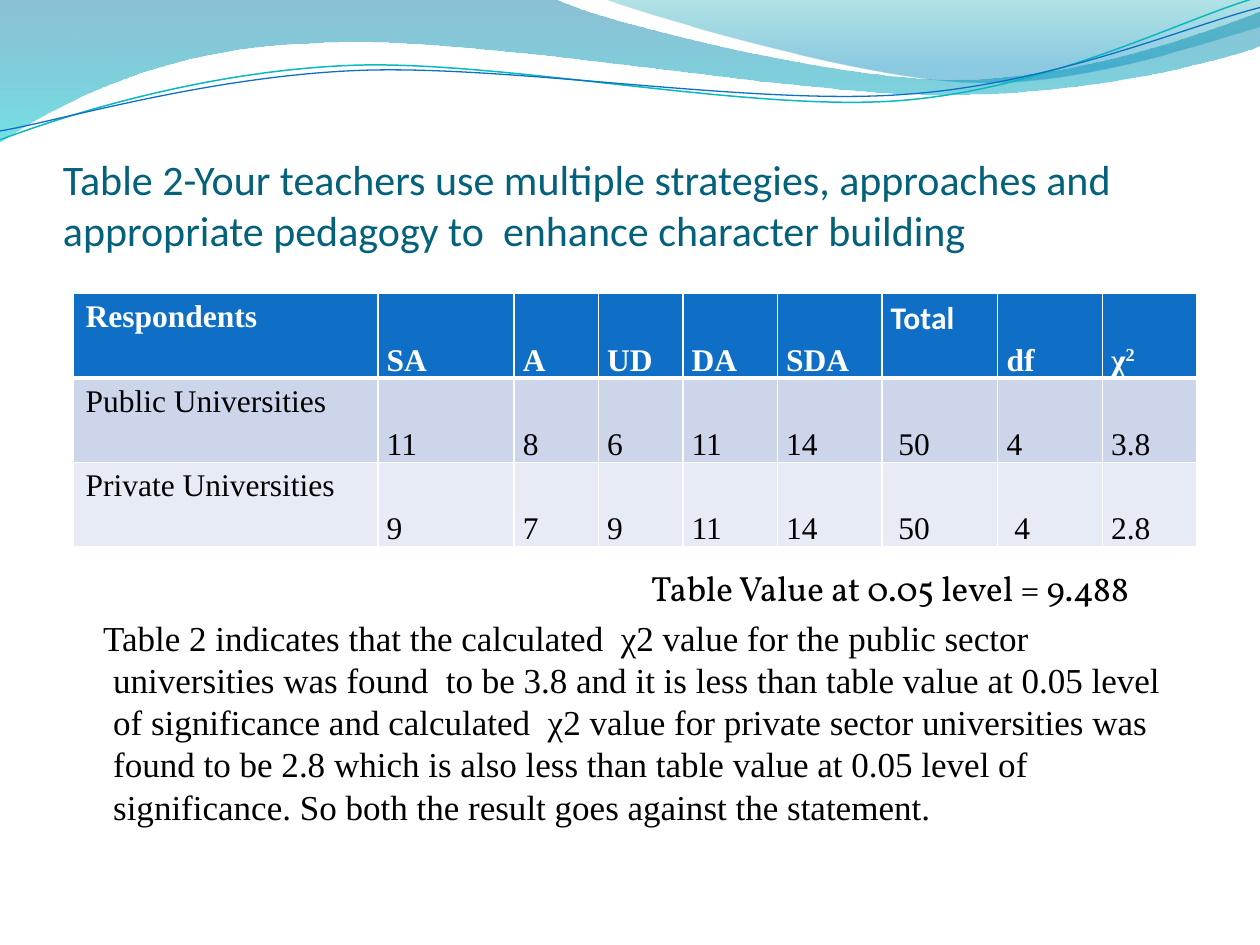
import pptx
import pptx.util
import pptx.dml.color
import pptx.enum.text
import pptx.oxml.ns
import lxml.etree

Pt = pptx.util.Pt
RGBColor = pptx.dml.color.RGBColor
ANCHOR = pptx.enum.text.MSO_ANCHOR
ALIGN = pptx.enum.text.PP_ALIGN
qn = pptx.oxml.ns.qn

TITLE_COLOR = RGBColor(0x04, 0x61, 0x7B)
BLACK = RGBColor(0x00, 0x00, 0x00)
WHITE = RGBColor(0xFF, 0xFF, 0xFF)
HEADER_BLUE = RGBColor(0x0F, 0x6F, 0xC6)
TEAL = RGBColor(0x0A, 0xB8, 0xBF)
ROW_FILLS = [HEADER_BLUE, RGBColor(0xCC, 0xD5, 0xEA), RGBColor(0xE7, 0xEB, 0xF5)]
SERIF = "Times New Roman"

# Content
TITLE = ("Table 2-Your teachers use multiple strategies, approaches and "
         "appropriate pedagogy to  enhance character building")
CAPTION = "Table Value at 0.05 level = 9.488"
FINDING = ("Table 2 indicates that the calculated  χ2 value for the public sector "
           "universities was found  to be 3.8 and it is less than table value at 0.05 "
           "level of significance and calculated  χ2 value for private sector "
           "universities was found to be 2.8 which is also less than table value at "
           "0.05 level of significance. So both the result goes against the statement.")
ROWS = [
    ["Respondents", "SA", "A", "UD", "DA", "SDA", "Total", "df", "χ"],
    ["Public Universities", "11", "8", "6", "11", "14", " 50", "4", "3.8"],
    ["Private Universities", "9", "7", "9", "11", "14", " 50", " 4", "2.8"],
]
COLUMN_WIDTHS = [2.42, 1.08, 0.67, 0.67, 0.75, 0.83, 0.92, 0.83, 0.75]
ROW_HEIGHT = 0.67

# Wave outlines in inches: a pair is a straight step, six numbers a Bezier curve
BANDS = [
    ([(0, 0), (4.4, -0.01), (4.76, 0.17, 6.64, 0.63, 7.58, 0.63),
      (8.53, 0.63, 9.58, 0.26, 10, 0.09), (10.01, 0.36),
      (9.83, 0.44, 8.7, 0.76, 7.46, 0.75), (6.22, 0.75, 3.82, 0.28, 2.57, 0.34),
      (1.29, 0.36, 0.46, 0.83, -0.01, 1.13)],
     [(0, RGBColor(0x00, 0x74, 0xA1), 45), (1, RGBColor(0x00, 0xC6, 0xCF), 55)]),
    ([(4.79, -0.01), (5.09, 0.11, 6.82, 0.62, 7.69, 0.65),
      (8.56, 0.69, 9.61, 0.32, 10, 0.21), (10, 0)],
     [(0, RGBColor(0x00, 0xA1, 0xA9), 30), (0.8, RGBColor(0x00, 0x8B, 0xBF), 45)]),
]
WAVES = [
    ([(0, 1.11), (0.48, 0.93, 1.58, 0.57, 2.77, 0.52),
      (3.95, 0.47, 5.93, 0.89, 7.13, 0.8), (8.33, 0.71, 9.38, 0.15, 9.98, -0.02)],
     TEAL, 0.85),
    ([(0, 1.04), (0.47, 0.96, 1.64, 0.61, 2.83, 0.56),
      (4.03, 0.51, 5.97, 0.84, 7.17, 0.75), (8.36, 0.67, 9.41, 0.21, 10, 0.06)],
     HEADER_BLUE, 0.75),
]


def length(inches):
    return pptx.util.Cm(inches * 2.54)


def apply(target, values):
    for name, value in values.items():
        setattr(target, name, value)


def add_outline(page, outline, close):
    """Join the end points of all steps, then bend the curved steps."""
    ends = [(length(step[-2]), length(step[-1])) for step in outline]
    builder = page.shapes.build_freeform(*ends[0])
    builder.add_line_segments(ends[1:], close=close)
    shape = builder.convert_to_shape()
    shape.shadow.inherit = False
    segments = list(shape._element.iter(qn("a:lnTo")))
    for segment, step in zip(segments, outline[1:]):
        if len(step) == 6:
            curve = lxml.etree.Element(qn("a:cubicBezTo"))
            for x, y in zip(step[::2], step[1::2]):
                point = lxml.etree.SubElement(curve, qn("a:pt"))
                point.set("x", str(length(x) - shape.left))
                point.set("y", str(length(y) - shape.top))
            segment.getparent().replace(segment, curve)
    return shape


def add_span(para, text, font):
    span = para.add_run()
    span.text = text
    apply(span.font, {k: v for k, v in font.items() if k != "color"})
    span.font.color.rgb = font["color"]
    return span


def add_box(page, area, frame_format):
    box = page.shapes.add_textbox(*map(length, area))
    apply(box.text_frame, {"word_wrap": True, **frame_format})
    return box.text_frame


def add_bottom_border(cell, points):
    border = lxml.etree.Element(qn("a:lnB"), w=str(Pt(points)))
    fill = lxml.etree.SubElement(border, qn("a:solidFill"))
    lxml.etree.SubElement(fill, qn("a:srgbClr"), val=str(WHITE))
    cell._tc.get_or_add_tcPr().insert(0, border)


deck = pptx.Presentation()
deck.slide_width, deck.slide_height = length(10), length(7.5)
page = deck.slides.add_slide(deck.slide_layouts[6])

# Waves along the top
for outline, stops in BANDS:
    band = add_outline(page, outline, True)
    band.line.fill.background()
    band.fill.gradient()
    band.fill.gradient_angle = 270
    for stop, (position, color, opacity) in zip(band.fill.gradient_stops, stops):
        stop.position = position
        stop.color.rgb = color
    nodes = band._element.spPr.iter(qn("a:srgbClr"))
    for node, (position, color, opacity) in zip(nodes, stops):
        lxml.etree.SubElement(node, qn("a:alpha"), val=str(opacity * 1000))
for outline, color, width in WAVES:
    wave = add_outline(page, outline, False)
    wave.fill.background()
    wave.line.color.rgb = color
    wave.line.width = Pt(width)

# Title
frame = add_box(page, (0.5, 0.42, 9, 1.6),
                {"vertical_anchor": ANCHOR.BOTTOM, "margin_left": 0,
                 "margin_right": 0, "margin_bottom": 0})
add_span(frame.paragraphs[0], TITLE,
         {"name": "Calibri", "size": Pt(24), "color": TITLE_COLOR})

# Caption and finding, set below the table by the top margin
frame = add_box(page, (0.5, 2.12, 9, 4.8), {"margin_top": length(2.38)})
caption = frame.paragraphs[0]
finding = frame.add_paragraph()
for para, text, font, left, indent in [(caption, CAPTION, "Vollkorn", 4.57, 0),
                                       (finding, FINDING, SERIF, 0.3, -0.08)]:
    add_span(para, text, {"name": font, "size": Pt(20), "color": BLACK})
    properties = para._p.get_or_add_pPr()
    properties.set("marL", str(length(left)))
    properties.set("indent", str(length(indent)))
apply(finding, {"line_spacing": Pt(24.1), "space_before": Pt(4.2)})

# Table
table = page.shapes.add_table(
    len(ROWS), len(COLUMN_WIDTHS), length(0.58), length(2.33),
    length(sum(COLUMN_WIDTHS)), length(ROW_HEIGHT * len(ROWS))).table
for column, width in zip(table.columns, COLUMN_WIDTHS):
    column.width = length(width)
for r, texts in enumerate(ROWS):
    table.rows[r].height = length(ROW_HEIGHT)
    for c, text in enumerate(texts):
        cell = table.cell(r, c)
        cell.fill.solid()
        cell.fill.fore_color.rgb = ROW_FILLS[r]
        if r == 0:
            add_bottom_border(cell, 3)
        para = cell.text_frame.paragraphs[0]
        if c > 0:
            apply(cell, {"margin_left": length(0.07), "margin_right": length(0.07),
                         "margin_top": 0, "margin_bottom": 0})
            para.line_spacing = 1.15
            if text != "Total":
                cell.vertical_anchor = ANCHOR.BOTTOM
            if r > 0:
                para.alignment = ALIGN.JUSTIFY
        font = {"name": "Calibri" if text == "Total" else SERIF, "size": Pt(18),
                "bold": r == 0, "color": WHITE if r == 0 else BLACK}
        add_span(para, text, font)
        if text == "χ":
            exponent = add_span(para, "2", font)
            exponent.font._element.set("baseline", "30000")

deck.save("out.pptx")
